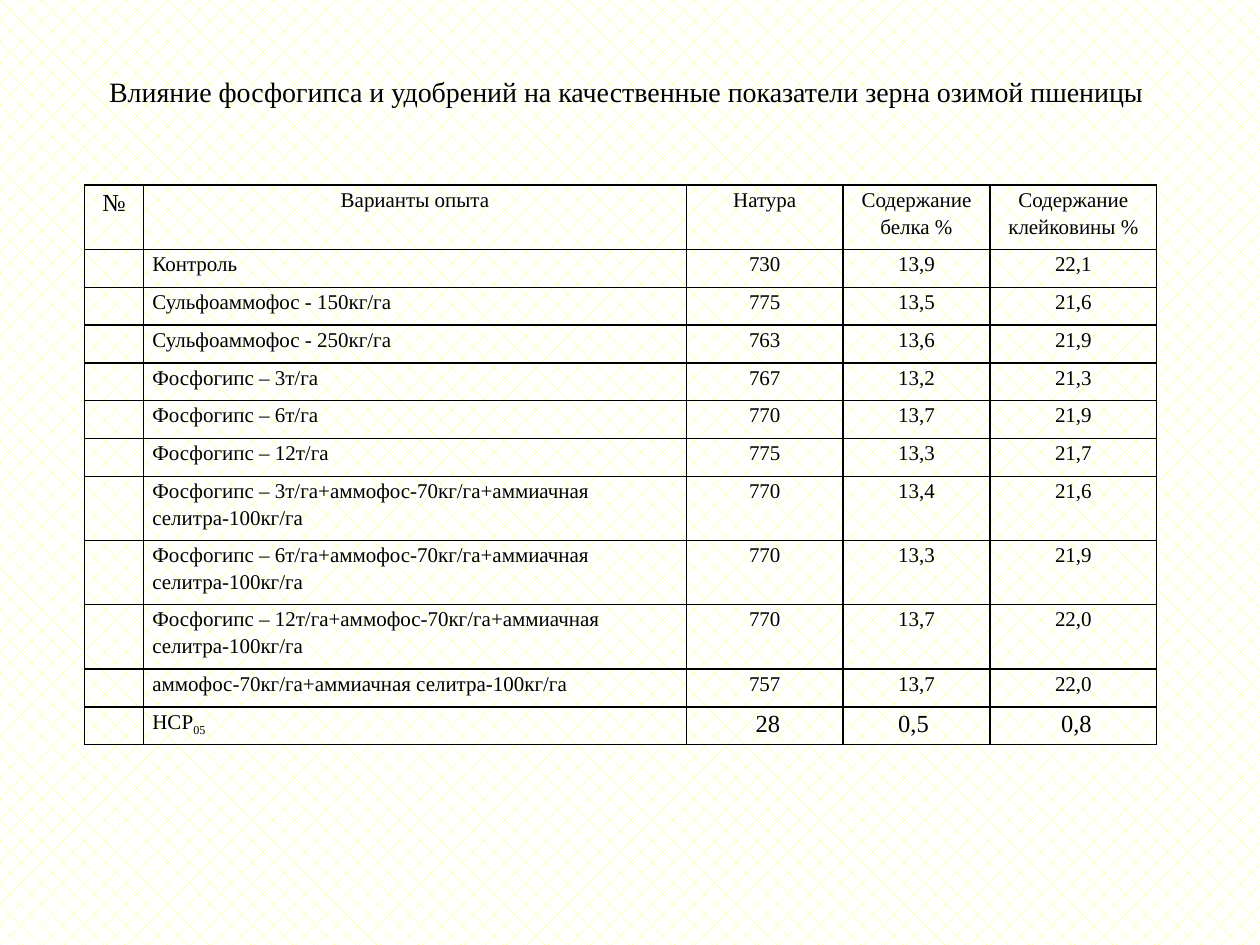
from lxml.etree import SubElement
from pptx import Presentation
from pptx.dml.color import RGBColor
from pptx.enum.dml import MSO_PATTERN
from pptx.enum.text import MSO_ANCHOR, PP_ALIGN
from pptx.oxml.ns import qn
from pptx.util import Inches, Pt

TITLE = "Влияние фосфогипса и удобрений на качественные показатели зерна озимой пшеницы "
MIX = "+аммофос-70кг/га+аммиачная селитра-100кг/га"
HEADER = ("№", "Варианты опыта", "Натура", "Содержание белка %", "Содержание клейковины %")
RESULTS = [
    ("Контроль", "730", "13,9", "22,1"),
    ("Сульфоаммофос - 150кг/га", "775", "13,5", "21,6"),
    ("Сульфоаммофос - 250кг/га", "763", "13,6", "21,9"),
    ("Фосфогипс – 3т/га", "767", "13,2", "21,3"),
    ("Фосфогипс – 6т/га", "770", "13,7", "21,9"),
    ("Фосфогипс – 12т/га", "775", "13,3", "21,7"),
    ("Фосфогипс – 3т/га" + MIX, "770", "13,4", "21,6"),
    ("Фосфогипс – 6т/га" + MIX, "770", "13,3", "21,9"),
    ("Фосфогипс – 12т/га" + MIX, "770", "13,7", "22,0"),
    (MIX[1:], "757", "13,7", "22,0"),
    ("НСР", " 28", "0,5 ", " 0,8"),
]
COL_WIDTHS = (0.47, 4.31, 1.24, 1.17, 1.32)
ROW_HEIGHT, TALL_ROW = 0.3, 0.51
TALL_ROWS = (0, 7, 8, 9)


def rgb(value):
    return RGBColor.from_string(value)


class SlideBuilder:
    """Holds the style and the current slide and adds elements to it."""

    font, ink = "Times New Roman", "000000"

    def __init__(self, slide):
        self.slide = slide

    def background(self, fore, back):
        fill = self.slide.background.fill
        fill.patterned()
        fill.pattern = MSO_PATTERN.DIAGONAL_BRICK
        fill.fore_color.rgb, fill.back_color.rgb = rgb(fore), rgb(back)

    def format_run(self, r, size):
        r.font.name, r.font.size = self.font, Pt(size)
        r.font.color.rgb = rgb(self.ink)

    def title(self, text, left, top, width, height, size):
        sp = self.slide.shapes.add_textbox(*map(Inches, (left, top, width, height)))
        tf = sp.text_frame
        tf.word_wrap, tf.vertical_anchor = True, MSO_ANCHOR.MIDDLE
        tf.text = text
        p = tf.paragraphs[0]
        p.alignment = PP_ALIGN.CENTER
        self.format_run(p.runs[0], size)

    def borders(self, cell):
        tc_pr = cell._tc.get_or_add_tcPr()
        for side in ("a:lnL", "a:lnR", "a:lnT", "a:lnB"):
            ln = SubElement(tc_pr, qn(side), w=str(Pt(1)))
            fill = SubElement(ln, qn("a:solidFill"))
            SubElement(fill, qn("a:srgbClr"), val=self.ink)

    def cell(self, cell, text, size, align):
        self.borders(cell)
        cell.fill.background()
        cell.margin_left = cell.margin_right = Inches(0.07)
        cell.margin_top = cell.margin_bottom = 0
        p = cell.text_frame.paragraphs[0]
        p.alignment, p.line_spacing = align, 1.15
        if text:
            p.text = text
            self.format_run(p.runs[0], size)
        else:
            SubElement(p._p, qn("a:endParaRPr"), sz=str(size * 100))

    def subscript(self, cell, text, size):
        r = cell.text_frame.paragraphs[0].add_run()
        r.text = text
        self.format_run(r, size)
        r._r.get_or_add_rPr().set("baseline", "-25000")

    def table(self, rows, left, top, col_widths, row_heights):
        box = (left, top, sum(col_widths), sum(row_heights))
        frame = self.slide.shapes.add_table(len(rows), len(col_widths), *map(Inches, box))
        table = frame.table
        table.first_row = table.horz_banding = False
        for column, width in zip(table.columns, col_widths):
            column.width = Inches(width)
        for row, height in zip(table.rows, row_heights):
            row.height = Inches(height)
        last = len(rows) - 1
        for i, row in enumerate(rows):
            for j, text in enumerate(row):
                large = (i, j) == (0, 0) or (i == last and j > 1)
                align = PP_ALIGN.LEFT if i and j == 1 else PP_ALIGN.CENTER
                self.cell(table.cell(i, j), text, 14 if large else 12, align)
        return table


def main():
    prs = Presentation()
    prs.slide_width, prs.slide_height = Inches(10), Inches(7.5)
    s = SlideBuilder(prs.slides.add_slide(prs.slide_layouts[6]))
    s.background("FFFF66", "FFFFFF")
    s.title(TITLE, 0.5, 0.3, 9, 0.85, 16)
    rows = [HEADER] + [("", *result) for result in RESULTS]
    heights = [TALL_ROW if i in TALL_ROWS else ROW_HEIGHT for i in range(len(rows))]
    table = s.table(rows, 0.67, 1.47, COL_WIDTHS, heights)
    s.subscript(table.cell(len(rows) - 1, 1), "05", 12)
    prs.save("out.pptx")


if __name__ == "__main__":
    main()
